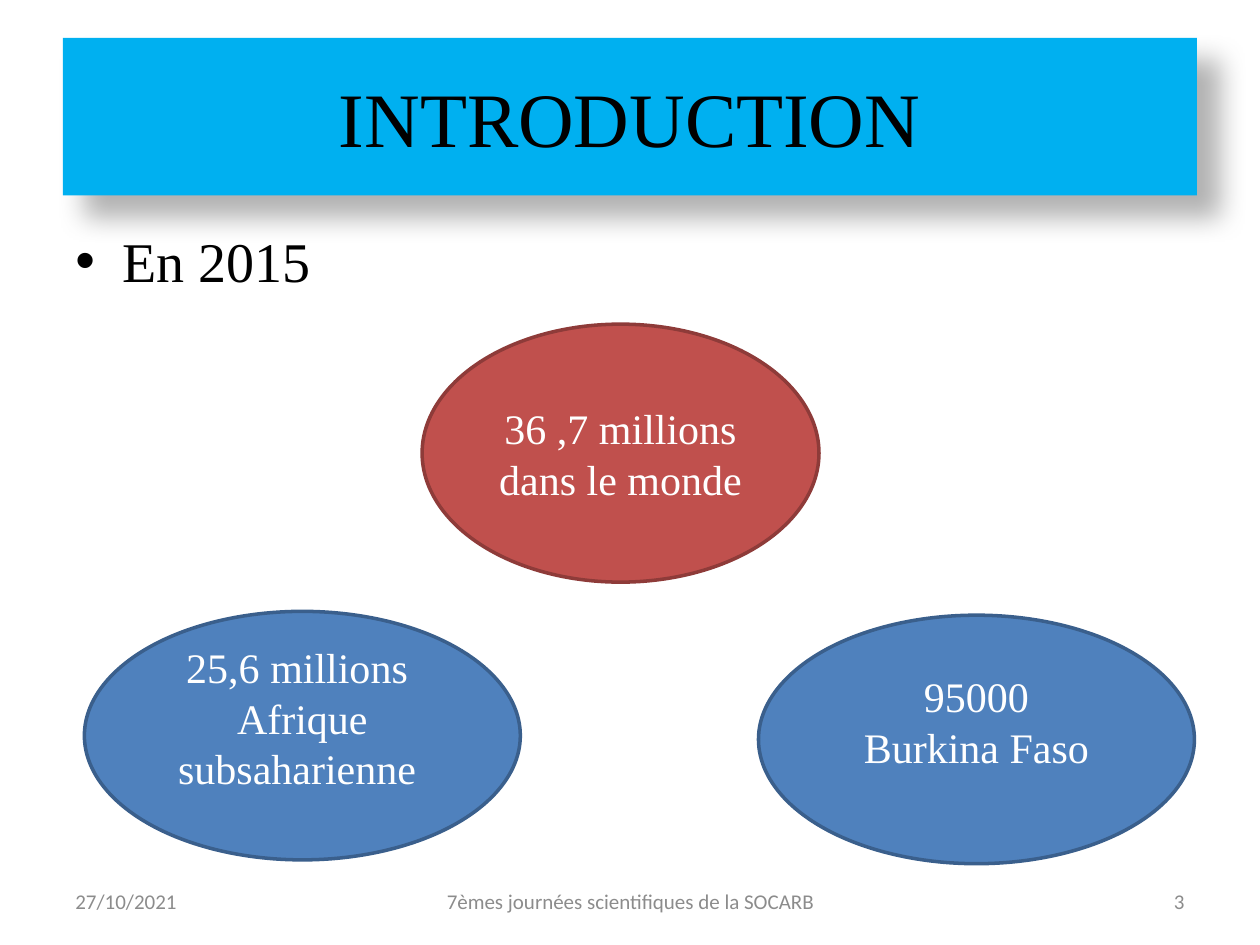
"""Build the introduction slide: 2015 figures for the world, Africa and Burkina Faso."""
import pptx
import pptx.util
import pptx.dml.color
import pptx.enum.shapes
import pptx.enum.text
import pptx.oxml

THEME = {
    "serif": "Times New Roman", "sans": "Calibri",
    "title": 44, "body": 32, "figure": 24, "footer": 12,
    "ink": "000000", "white": "FFFFFF", "grey": "8C8C8C", "banner": "00B0F0",
    "world": ("C0504D", "8E3B39"), "region": ("4F81BD", "3A5F8C"),
}
NS = 'xmlns:a="http://schemas.openxmlformats.org/drawingml/2006/main"'
ALIGN = pptx.enum.text.PP_ALIGN
ANCHOR = pptx.enum.text.MSO_ANCHOR
KIND = pptx.enum.shapes.MSO_SHAPE
rgb = pptx.dml.color.RGBColor.from_string

deck = pptx.Presentation()
deck.slide_width, deck.slide_height = pptx.util.Inches(10), pptx.util.Inches(7.5)
slide = deck.slides.add_slide(deck.slide_layouts[6])
margin, content = 0.05, 0.9


def box(left, top, width, height):
    """Turn shares of the slide into lengths."""
    across, down = deck.slide_width, deck.slide_height
    return int(left * across), int(top * down), int(width * across), int(height * down)


def write(part, lines, size, face, color, align, anchor=ANCHOR.MIDDLE):
    """Fill a part with one paragraph per line."""
    frame = part.text_frame
    for key, value in {"word_wrap": True, "vertical_anchor": anchor}.items():
        setattr(frame, key, value)
    frame.text = "\n".join(lines)
    look = {"name": THEME[face], "size": pptx.util.Pt(THEME[size])}
    for paragraph in frame.paragraphs:
        paragraph.alignment = align
        font = paragraph.runs[0].font
        for key, value in look.items():
            setattr(font, key, value)
        font.color.rgb = rgb(THEME[color])


banner = slide.shapes.add_shape(KIND.RECTANGLE, *box(margin, 0.04, content, 1 / 6))
banner.fill.solid()
banner.fill.fore_color.rgb = rgb(THEME["banner"])
banner.line.fill.background()
banner.shadow.inherit = False
banner_effects = banner.element.spPr.find(pptx.oxml.ns.qn("a:effectLst"))
banner_effects.append(pptx.oxml.parse_xml(
    f'<a:outerShdw {NS} blurRad="190500" dist="228600" dir="2700000" algn="tl" rotWithShape="0">'
    f'<a:srgbClr val="{THEME["ink"]}"><a:alpha val="30000"/></a:srgbClr></a:outerShdw>'))
write(banner, ["INTRODUCTION"], "title", "serif", "ink", ALIGN.CENTER)

year = slide.shapes.add_textbox(*box(margin, 0.233, content, 0.66))
write(year, ["En 2015"], "body", "serif", "ink", ALIGN.LEFT, ANCHOR.TOP)
year_line = year.text_frame.paragraphs[0]
year_line.space_before = pptx.util.Pt(0.2 * THEME["body"])
year_format = year_line._p.get_or_add_pPr()
for key, value in {"marL": "342900", "indent": "-342900"}.items():
    year_format.set(key, value)
for bullet in ('<a:buFont {} typeface="Arial"/>', '<a:buChar {} char="•"/>'):
    year_format.append(pptx.oxml.parse_xml(bullet.format(NS)))

figures = [
    (["36 ,7 millions dans le monde"], "world", (0.335, 0.343, 0.315, 0.273), 0.05),
    (["25,6 millions ", "Afrique subsaharienne "], "region", (0.067, 0.647, 0.346, 0.263), 0.34),
    (["95000", "Burkina Faso"], "region", (0.602, 0.651, 0.346, 0.263), 0.34),
]
for lines, place, area, bottom_inset in figures:
    figure = slide.shapes.add_shape(KIND.OVAL, *box(*area))
    inside, edge = THEME[place]
    figure.fill.solid()
    figure.fill.fore_color.rgb = rgb(inside)
    figure.line.color.rgb = rgb(edge)
    figure.line.width = pptx.util.Pt(2)
    figure.shadow.inherit = False
    figure.text_frame.margin_bottom = pptx.util.Inches(bottom_inset)
    write(figure, lines, "figure", "serif", "white", ALIGN.CENTER)

footers = [
    ("27/10/2021", margin, 0.233, ALIGN.LEFT),
    ("7èmes journées scientifiques de la SOCARB", 0.342, 0.317, ALIGN.CENTER),
    ("3", 0.717, 0.233, ALIGN.RIGHT),
]
for words, left, width, align in footers:
    footer = slide.shapes.add_textbox(*box(left, 0.927, width, 0.053))
    write(footer, [words], "footer", "sans", "grey", align)

deck.save("out.pptx")
